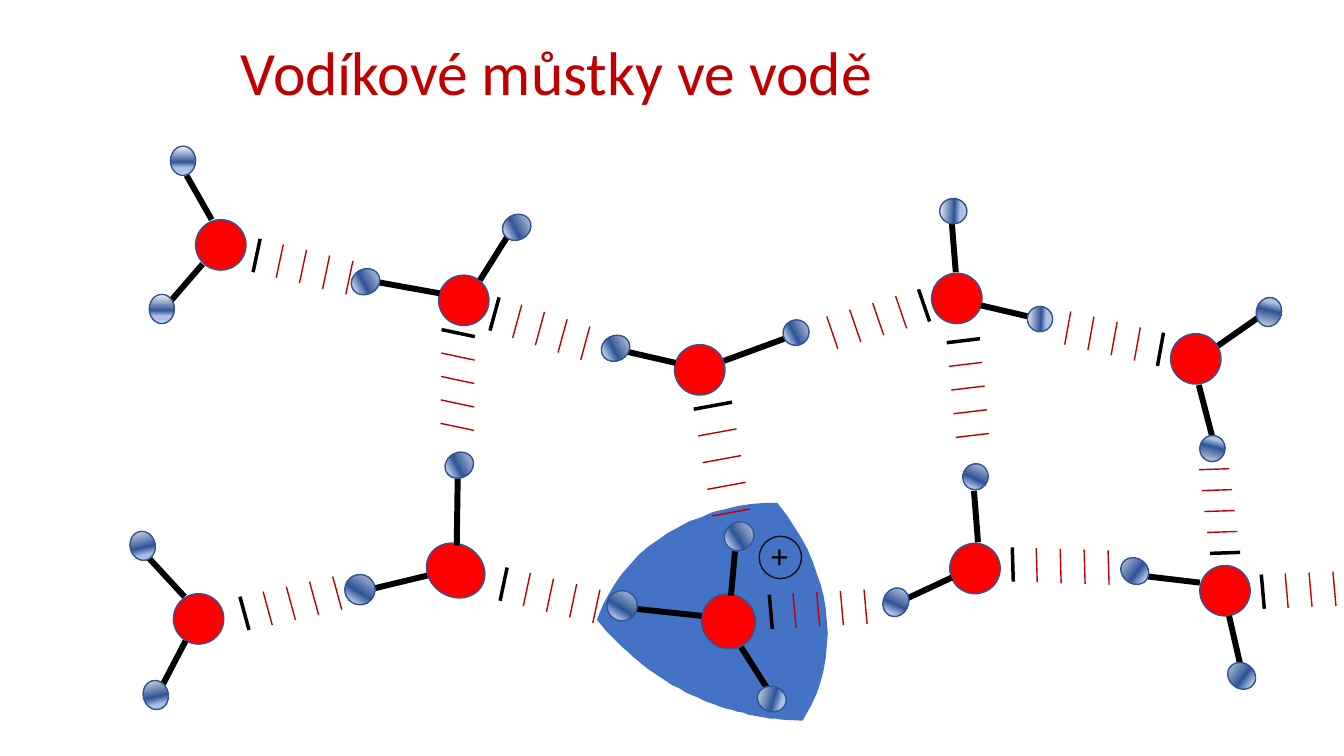
from dataclasses import dataclass

from lxml.etree import SubElement
from pptx import Presentation
from pptx.dml.color import RGBColor
from pptx.enum.shapes import MSO_CONNECTOR, MSO_SHAPE
from pptx.enum.text import MSO_ANCHOR, MSO_AUTO_SIZE, PP_ALIGN
from pptx.oxml.ns import qn
from pptx.util import Emu, Pt

PX = 9144  # 100 px to the inch


@dataclass(frozen=True)
class Theme:
    font: str = "Calibri"
    title_size: int = 44
    charge_size: int = 24
    red: str = "C00000"
    black: str = "000000"
    oxygen: str = "FF0000"
    outline: str = "325491"
    charge_ring: str = "0F1113"
    ion: str = "4472C4"
    hydrogen: tuple = ((0, "F6F8FC"), (55, "2F5597"), (74, "ABC0E4"),
                       (83, "ABC0E4"), (100, "C7D5ED"))
    bond_width: float = 4.25
    pair_width: float = 2.5
    thin_width: float = 1


THEME = Theme()

# Content
TITLE = "Vodíkové můstky ve vodě "
TITLE_BOX = (-65, 2, 1248, 145)
CHARGE = "+"
CHARGE_BOX = (755, 526, 33, 50)
CHARGE_RING = (753, 532, 42, 42)

# Outline of the ion: a start, then lines (1 point) and curves (3 points)
ION_START = (687, 690)
ION_SEGMENTS = [
    [(651, 673), (621, 649), (598, 622)], [(592, 615)], [(598, 600)],
    [(626, 540), (688, 504), (758, 499)], [(771, 499)], [(781, 512)],
    [(822, 569), (833, 639), (805, 699)], [(796, 715)], [(775, 714)],
    [(746, 711), (716, 703), (687, 690)],
]

# Oxygen box and rotation, then each hydrogen: box, rotation, bond from and to
MOLECULES = [
    ((194, 218, 50, 50, 0), [
        ((169, 145, 25, 29, 0), (185, 174, 210, 218)),
        ((148, 292, 25, 29, 0), (201, 262, 169, 299))]),
    ((435, 273, 50, 50, 62.1), [
        ((500, 211, 25, 29, 62.1), (503, 235, 476, 278)),
        ((350, 265, 25, 29, 62.1), (436, 291, 375, 280))]),
    ((669, 342, 50, 50, 62.1), [
        ((777, 317, 25, 26, 62.1), (778, 336, 718, 358)),
        ((598, 331, 25, 29, 62.1), (670, 360, 622, 349))]),
    ((924, 271, 50, 50, 272.1), [
        ((933, 196, 25, 27, 272.1), (944, 221, 948, 270)),
        ((1019, 304, 25, 25, 272.1), (973, 303, 1020, 314))]),
    ((1161, 331, 50, 50, 194.3), [
        ((1190, 432, 25, 26, 194.3), (1202, 432, 1189, 382)),
        ((1246, 295, 25, 29, 194.3), (1208, 343, 1248, 315))]),
    ((172, 589, 50, 50, 347), [
        ((129, 527, 25, 29, 347), (148, 554, 183, 592)),
        ((142, 675, 25, 29, 347), (184, 636, 161, 680))]),
    ((422, 540, 60, 52, 32.1), [
        ((342, 570, 30, 30, 32.1), (424, 571, 370, 584)),
        ((443, 447, 25, 29, 62.1), (453, 541, 454, 473))]),
    ((695, 590, 55, 53, 57.3), [
        ((719, 517, 28, 30, 57.3), (729, 547, 725, 591)),
        ((602, 586, 30, 30, 32.1), (696, 611, 630, 604)),
        ((753, 679, 25, 29, 286.7), (735, 642, 761, 683))]),
    ((942, 539, 50, 50, 24.6), [
        ((955, 460, 25, 26, 24.6), (966, 487, 970, 538)),
        ((876, 583, 25, 29, 24.6), (944, 573, 899, 594))]),
    ((1190, 561, 50, 50, 306.4), [
        ((1113, 552, 25, 29, 306.4), (1139, 572, 1190, 578)),
        ((1219, 656, 25, 29, 306.4), (1219, 611, 1230, 659))]),
]

# Hydrogen bridges: black rung from and to, offset of the last rung, rungs
BRIDGES = [
    ((258, 237, 251, 270), (92, 22), 5),
    ((495, 295, 486, 328), (90, 29), 5),
    ((471, 334, 438, 327), (-1, 93), 5),
    ((726, 399, 688, 406), (18, 106), 5),
    ((922, 319, 911, 287), (-91, 27), 5),
    ((972, 336, 939, 340), (9, 94), 5),
    ((1148, 363, 1154, 330), (-92, -21), 5),
    ((238, 592, 247, 625), (92, -20), 5),
    ((503, 563, 496, 596), (92, 22), 5),
    ((763, 590, 766, 624), (94, -5), 5),
    ((1004, 543, 1005, 577), (95, 3), 5),
    ((1200, 549, 1230, 548), (-11, -83), 5),
    ((1251, 570, 1254, 604), (71, -3), 4),
]


def px(*lengths):
    return [Emu(round(length * PX)) for length in lengths]


def color(value):
    return RGBColor.from_string(value)


def add_ball(shapes, box, rotation, outline):
    ball = shapes.add_shape(MSO_SHAPE.OVAL, *px(*box))
    ball.rotation = rotation
    ball.shadow.inherit = False
    ball.line.color.rgb = color(outline)
    ball.line.width = Pt(THEME.thin_width)
    return ball


def add_hydrogen(shapes, box, rotation):
    fill = add_ball(shapes, box, rotation, THEME.outline).fill
    fill.gradient()
    fill.gradient_angle = 270
    stops = fill.gradient_stops[0]._gs.getparent()
    for stop in list(stops):
        stops.remove(stop)
    for position, value in THEME.hydrogen:
        stop = SubElement(stops, qn("a:gs"), pos=str(position * 1000))
        SubElement(stop, qn("a:srgbClr"), val=value)


def add_stroke(shapes, ends, stroke_color, width):
    stroke = shapes.add_connector(MSO_CONNECTOR.STRAIGHT, *px(*ends))
    stroke.line.color.rgb = color(stroke_color)
    stroke.line.width = Pt(width)
    SubElement(stroke._element.spPr, qn("a:effectLst"))


def add_run(paragraph, words, size, text_color):
    run = paragraph.add_run()
    run.text = words
    run.font.name = THEME.font
    run.font.size = Pt(size)
    run.font.color.rgb = color(text_color)


def curve_points(start, segments, steps=16):
    points = []
    for segment in segments:
        if len(segment) == 1:
            points += segment
        else:
            corners = [start, *segment]
            for step in range(1, steps + 1):
                t = step / steps
                weights = ((1 - t) ** 3, 3 * t * (1 - t) ** 2,
                           3 * t * t * (1 - t), t ** 3)
                points.append(tuple(sum(w * c[axis] for w, c in zip(weights, corners))
                                    for axis in (0, 1)))
        start = segment[-1]
    return points


def main():
    deck = Presentation()
    deck.slide_width, deck.slide_height = px(1333, 750)
    slide = deck.slides.add_slide(deck.slide_layouts[5])
    shapes = slide.shapes

    # Title
    title = shapes.title
    title.left, title.top, title.width, title.height = px(*TITLE_BOX)
    title.text_frame.vertical_anchor = MSO_ANCHOR.MIDDLE
    title.text_frame.auto_size = MSO_AUTO_SIZE.NONE
    heading = title.text_frame.paragraphs[0]
    heading.alignment = PP_ALIGN.CENTER
    heading.line_spacing = 0.9
    add_run(heading, TITLE, THEME.title_size, THEME.red)

    # Ion background
    builder = shapes.build_freeform(*ION_START, scale=PX)
    builder.add_line_segments(curve_points(ION_START, ION_SEGMENTS), close=True)
    ion = builder.convert_to_shape()
    ion.shadow.inherit = False
    ion.fill.solid()
    ion.fill.fore_color.rgb = color(THEME.ion)
    ion.line.fill.background()

    # Hydrogen bridges
    for (x1, y1, x2, y2), (across, down), count in BRIDGES:
        for rung in range(count):
            dx, dy = (span * rung / (count - 1) for span in (across, down))
            look = (THEME.red, THEME.thin_width) if rung else (THEME.black, THEME.pair_width)
            add_stroke(shapes, (x1 + dx, y1 + dy, x2 + dx, y2 + dy), *look)

    # Molecules
    for (*oxygen_box, oxygen_rotation), hydrogens in MOLECULES:
        oxygen = add_ball(shapes, oxygen_box, oxygen_rotation, THEME.outline)
        oxygen.fill.solid()
        oxygen.fill.fore_color.rgb = color(THEME.oxygen)
        for (*hydrogen_box, rotation), bond in hydrogens:
            add_stroke(shapes, bond, THEME.black, THEME.bond_width)
            add_hydrogen(shapes, hydrogen_box, rotation)

    # Charge
    add_ball(shapes, CHARGE_RING, 0, THEME.charge_ring).fill.background()
    charge = shapes.add_textbox(*px(*CHARGE_BOX)).text_frame
    charge.word_wrap = False
    charge.auto_size = MSO_AUTO_SIZE.SHAPE_TO_FIT_TEXT
    add_run(charge.paragraphs[0], CHARGE, THEME.charge_size, THEME.black)

    deck.save("out.pptx")


if __name__ == "__main__":
    main()
